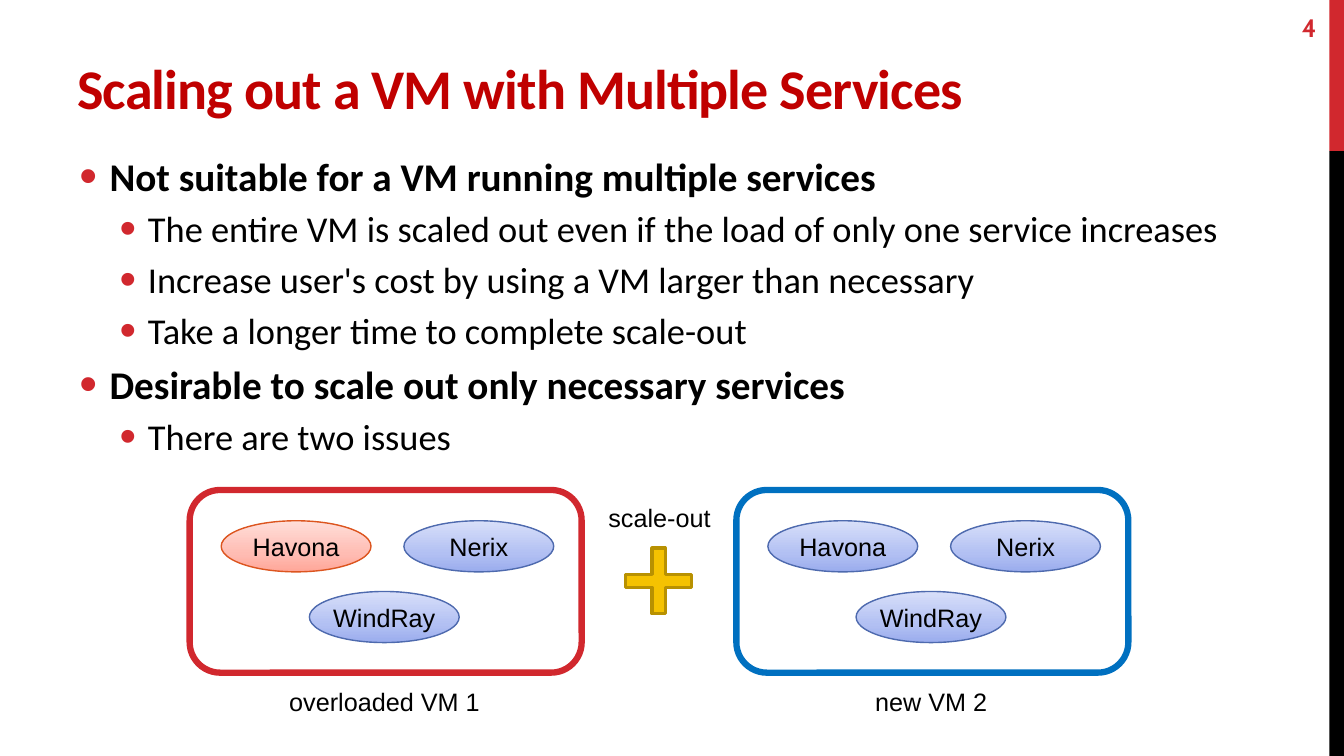
from pptx import Presentation
from pptx.dml.color import RGBColor
from pptx.enum import shapes, text
from pptx.oxml import parse_xml
from pptx.oxml.ns import nsdecls
from pptx.util import Pt

COLORS = {"red": "D1282E", "title": "C00000", "black": "000000", "blue": "0070C0",
          "plus": "F5C201", "plus line": "B89101"}
GRADIENTS = {
    "busy": ("DC551F", ((0, "FFA698"), (35, "FFBCB3"), (100, "FFDED9"))),
    "normal": ("4E6AAE", ((0, "9AACED"), (35, "B2C0F3"), (100, "D8DFF9"))),
}
TITLE = "Scaling out a VM with Multiple Services"
BULLETS = [
    (0, "Not suitable for a VM running multiple services"),
    (1, "The entire VM is scaled out even if the load of only one service increases"),
    (1, "Increase user's cost by using a VM larger than necessary"),
    (1, "Take a longer time to complete scale-out"),
    (0, "Desirable to scale out only necessary services"),
    (1, "There are two issues"),
]
LEVELS = [
    {"size": 28, "bold": True, "before": 6, "margin": 21.6, "indent": -21.6},
    {"size": 26, "bold": False, "before": 5.2, "margin": 49, "indent": -20.2},
]
SIDEBARS = [("red", 0, 108), ("black", 108, 432)]
SERVICES = [("Havona", 22.5, 22), ("Nerix", 153, 22), ("WindRay", 85.5, 72.5)]
VMS = [(135.5, "red", "busy"), (526, "blue", "normal")]
VM_TOP, VM_WIDTH, VM_HEIGHT = 350, 280, 130.5
SERVICE_WIDTH, SERVICE_HEIGHT = 107, 36.5
LABELS = [
    ("overloaded VM 1", 199.5, 486.5, 152),
    ("new VM 2", 618, 486.5, 95),
    ("scale-out", 427.5, 355.5, 88.5),
]

presentation = Presentation()
presentation.slide_width, presentation.slide_height = Pt(960), Pt(540)
slide = presentation.slides.add_slide(presentation.slide_layouts[5])


def rgb(name):
    return RGBColor.from_string(COLORS.get(name, name))


def style(paragraph, size, font, color="black", bold=False, align=text.PP_ALIGN.LEFT):
    paragraph.alignment = align
    paragraph.font.size = Pt(size)
    paragraph.font.name = font
    paragraph.font.bold = bold
    paragraph.font.color.rgb = rgb(color)


def add_shape(kind, left, top, width, height, fill=None, line=None, weight=1):
    shape = slide.shapes.add_shape(kind, Pt(left), Pt(top), Pt(width), Pt(height))
    shape.shadow.inherit = False
    if fill:
        shape.fill.solid()
        shape.fill.fore_color.rgb = rgb(fill)
    else:
        shape.fill.background()
    if line:
        shape.line.color.rgb = rgb(line)
        shape.line.width = Pt(weight)
    else:
        shape.line.fill.background()
    return shape


def add_text_box(left, top, width, height, wrap=True):
    box = slide.shapes.add_textbox(Pt(left), Pt(top), Pt(width), Pt(height))
    box.text_frame.word_wrap = wrap
    return box.text_frame


def add_service(name, left, top, state):
    line, stops = GRADIENTS[state]
    shape = add_shape(shapes.MSO_SHAPE.OVAL, left, top, SERVICE_WIDTH, SERVICE_HEIGHT, line=line)
    stop_xml = "".join(f'<a:gs pos="{position * 1000}"><a:srgbClr val="{color}"/></a:gs>'
                       for position, color in stops)
    gradient = parse_xml(f'<a:gradFill {nsdecls("a")} rotWithShape="1"><a:gsLst>{stop_xml}</a:gsLst>'
                         '<a:lin ang="16200000" scaled="0"/></a:gradFill>')
    properties = shape.element.spPr
    properties.replace(properties.find("{*}noFill"), gradient)
    frame = shape.text_frame
    frame.word_wrap = False
    frame.vertical_anchor = text.MSO_ANCHOR.MIDDLE
    frame.text = name
    style(frame.paragraphs[0], 18, "Arial", align=text.PP_ALIGN.CENTER)


def add_bullet(paragraph, level):
    properties = paragraph._p.get_or_add_pPr()
    properties.set("marL", str(Pt(level["margin"])))
    properties.set("indent", str(Pt(level["indent"])))
    children = (f'<a:buClr {nsdecls("a")}><a:srgbClr val="{COLORS["red"]}"/></a:buClr>',
                f'<a:buSzPct {nsdecls("a")} val="130000"/>',
                f'<a:buFont {nsdecls("a")} typeface="Arial"/>',
                f'<a:buChar {nsdecls("a")} char="•"/>')
    default_font = properties.find("{*}defRPr")
    for child in children:
        default_font.addprevious(parse_xml(child))


for color, top, height in SIDEBARS:
    add_shape(shapes.MSO_SHAPE.RECTANGLE, 949.6, top, 10.4, height, color)

title = slide.shapes.title
title.left, title.top, title.width, title.height = Pt(48), Pt(12), Pt(865.5), Pt(78)
title.text_frame.text = TITLE
title.text_frame.auto_size = text.MSO_AUTO_SIZE.NONE
title.text_frame.vertical_anchor = text.MSO_ANCHOR.BOTTOM
style(title.text_frame.paragraphs[0], 40, "Calibri", "title", True)
title.text_frame.paragraphs[0].runs[0]._r.get_or_add_rPr().set("spc", "-60")

body = add_text_box(48, 105, 865.5, 406)
body.margin_left = body.margin_right = Pt(8.64)
for index, (depth, wording) in enumerate(BULLETS):
    level = LEVELS[depth]
    paragraph = body.add_paragraph() if index else body.paragraphs[0]
    paragraph.text = wording
    paragraph.level = depth
    paragraph.space_before = Pt(level["before"])
    style(paragraph, level["size"], "Calibri", bold=level["bold"])
    add_bullet(paragraph, level)

number = add_text_box(875.5, 5, 72, 29)
number.vertical_anchor = text.MSO_ANCHOR.MIDDLE
number.text = "4"
style(number.paragraphs[0], 18, "Cabin", "red", True, text.PP_ALIGN.RIGHT)

for left, outline, first_state in VMS:
    add_shape(shapes.MSO_SHAPE.ROUNDED_RECTANGLE, left, VM_TOP, VM_WIDTH, VM_HEIGHT,
              line=outline, weight=4.5)
    for index, (name, across, down) in enumerate(SERVICES):
        add_service(name, left + across, VM_TOP + down, "normal" if index else first_state)

for wording, left, top, width in LABELS:
    label = add_text_box(left, top, width, 29, wrap=False)
    label.auto_size = text.MSO_AUTO_SIZE.SHAPE_TO_FIT_TEXT
    label.text = wording
    style(label.paragraphs[0], 18, "Arial")

plus = add_shape(shapes.MSO_SHAPE.CROSS, 447, 391.5, 47, 47, "plus", "plus line", 2.25)
plus.adjustments[0] = 0.4

presentation.save("out.pptx")
